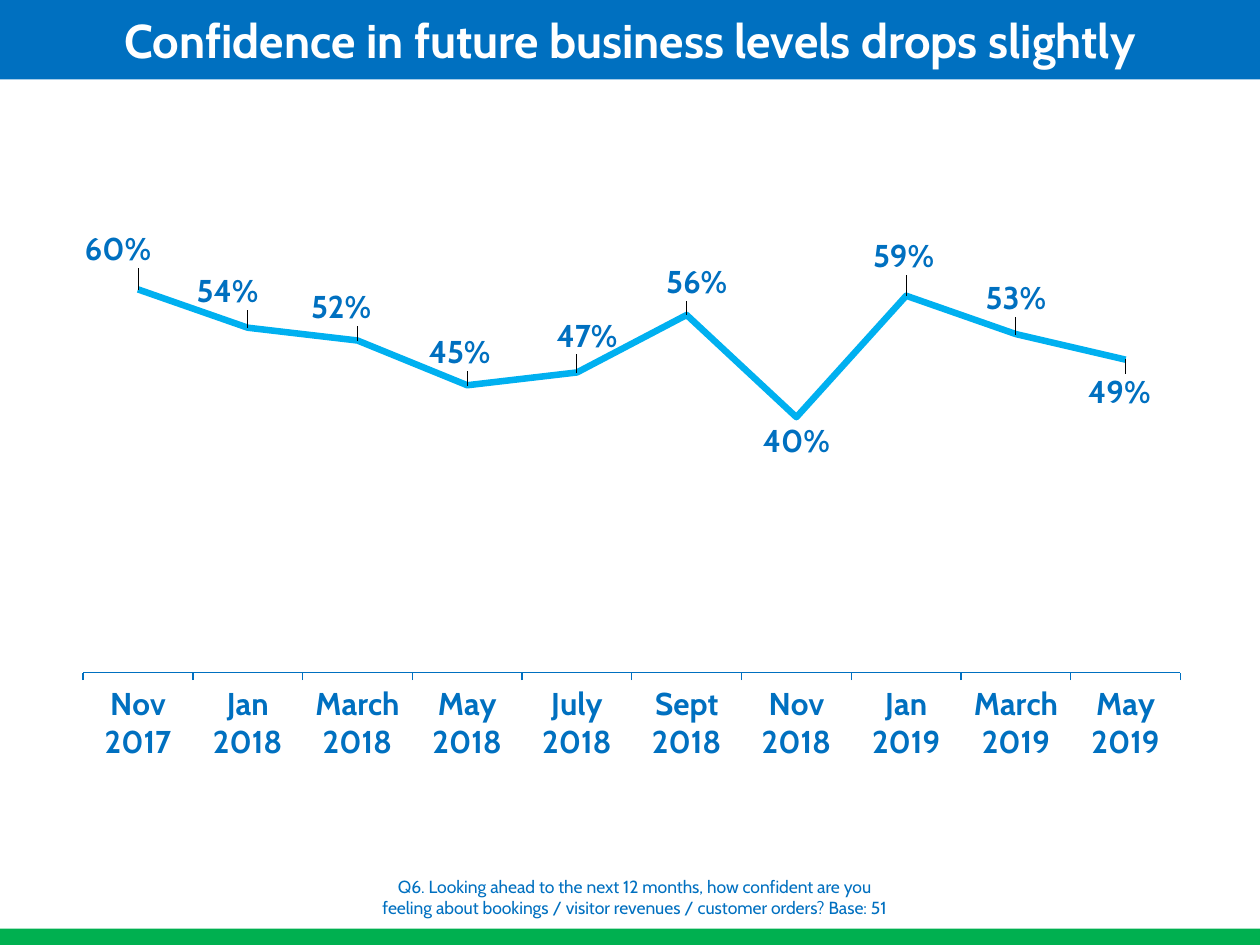
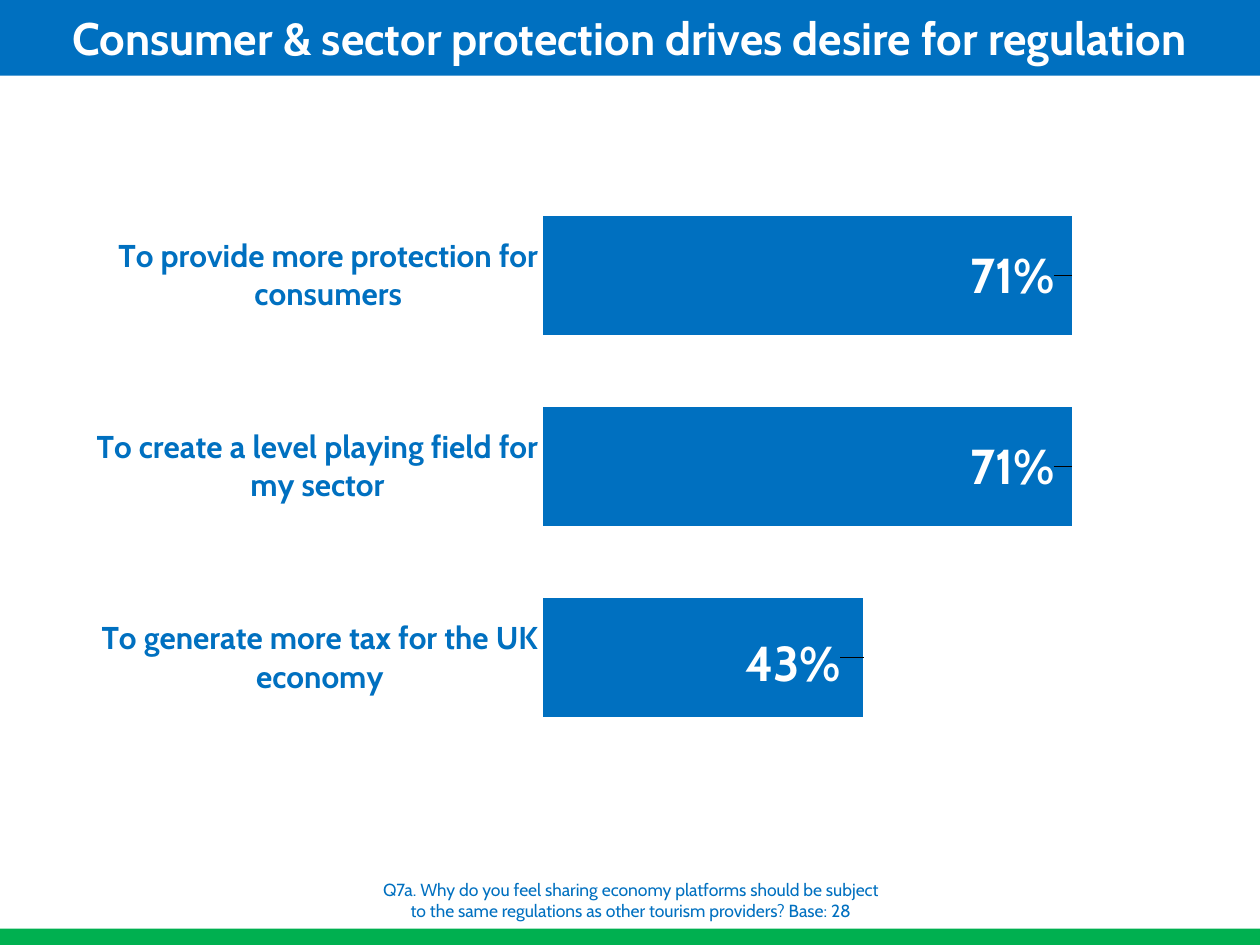
"""Build two survey slides: a confidence trend line and a bar chart of reasons for regulation."""
from dataclasses import dataclass

from lxml import etree
from pptx import Presentation
from pptx import util as u
from pptx.chart import data as chart_data
from pptx.dml import color
from pptx.enum import chart as charts, shapes, text
from pptx.oxml import ns

COLOURS = {"blue": "0070C0", "sky": "00B0F0", "green": "00B050", "white": "FFFFFF", "black": "000000"}
FONT = "Cabin"
PAGE_WIDTH, PAGE_HEIGHT = 10, 7.5
FOOTER_TOP = 7.37
ABOVE = charts.XL_LABEL_POSITION.ABOVE
BELOW = charts.XL_LABEL_POSITION.BELOW
INSIDE_END = charts.XL_LABEL_POSITION.INSIDE_END


@dataclass(frozen=True)
class Area:
    left: float
    top: float
    width: float
    height: float

    def lengths(self) -> tuple:
        return tuple(u.Inches(n) for n in (self.left, self.top, self.width, self.height))


@dataclass(frozen=True)
class Point:
    category: str
    value: float
    position: charts.XL_LABEL_POSITION
    shift_x: float = 0
    shift_y: float = 0


@dataclass(frozen=True)
class SurveyChart:
    kind: charts.XL_CHART_TYPE
    area: Area
    plot: Area
    maximum: float
    font: str
    size: int
    label_size: int
    label_colour: str
    points: list[Point]


@dataclass(frozen=True)
class SurveyPage:
    title: str
    title_size: int
    title_height: float
    question: str
    question_area: Area
    chart: SurveyChart


PAGES = [
    SurveyPage(
        "Confidence in future business levels drops slightly", 27, 0.63,
        "Q6. Looking ahead to the next 12 months, how confident are you feeling about "
        "bookings / visitor revenues / customer orders? Base: 51",
        Area(2.87, 6.9, 4.33, 0.47),
        SurveyChart(
            charts.XL_CHART_TYPE.LINE, Area(0.28, 1.55, 9.37, 4.65), Area(0.66, 1.79, 8.71, 3.55),
            0.7, "Calibri", 10, 18, "blue",
            [
                Point("Nov 2017", 0.6, ABOVE, -0.16, -0.13),
                Point("Jan 2018", 0.54, ABOVE, -0.16, -0.1),
                Point("March 2018", 0.52, ABOVE, -0.13, -0.07),
                Point("May 2018", 0.45, ABOVE, -0.06, -0.07),
                Point("July 2018", 0.47, ABOVE, 0.08, -0.1),
                Point("Sept 2018", 0.56, ABOVE, 0.08, -0.07),
                Point("Nov 2018", 0.4, BELOW),
                Point("Jan 2019", 0.59, ABOVE, -0.02, -0.12),
                Point("March 2019", 0.53, ABOVE, 0, -0.09),
                Point("May 2019", 0.49, BELOW, -0.05, 0.07),
            ],
        ),
    ),
    SurveyPage(
        "Consumer & sector protection drives desire for regulation", 26, 0.6,
        "Q7a. Why do you feel sharing economy platforms should be subject to the same "
        "regulations as other tourism providers? Base: 28",
        Area(2.93, 6.93, 4.15, 0.44),
        SurveyChart(
            charts.XL_CHART_TYPE.BAR_CLUSTERED, Area(0.75, 1.07, 8.5, 5.51), Area(4.31, 1.43, 4.73, 4.55),
            0.8, "Lato", 8, 28, "white",
            [
                Point("To provide more protection for consumers", 0.71, INSIDE_END, -0.1),
                Point("To create a level playing field for my sector", 0.71, INSIDE_END, -0.1),
                Point("To generate more tax for the UK economy", 0.43, INSIDE_END, -0.14, 0.05),
            ],
        ),
    ),
]


def rgb(name: str) -> color.RGBColor:
    return color.RGBColor.from_string(COLOURS[name])


def style_font(font, size: int, colour: str, bold: bool = False, name: str = FONT) -> None:
    font.name, font.size, font.bold = name, u.Pt(size), bold
    font.color.rgb = rgb(colour)


def write(box, wording: str, size: int, colour: str, bold: bool = False) -> None:
    box.text_frame.word_wrap = True
    para = box.text_frame.paragraphs[0]
    para.text = wording
    para.alignment = text.PP_ALIGN.CENTER
    style_font(para.font, size, colour, bold)


def add_band(page, top: float, height: float, colour: str):
    band = page.shapes.add_shape(
        shapes.MSO_SHAPE.RECTANGLE, *Area(0, top, PAGE_WIDTH, height).lengths())
    band.shadow.inherit = False
    band.fill.solid()
    band.fill.fore_color.rgb = rgb(colour)
    band.line.fill.background()
    return band


def set_layout(parent, index: int, settings: dict) -> None:
    for old in parent.findall(ns.qn("c:layout")):
        parent.remove(old)
    layout = etree.Element(ns.qn("c:layout"))
    manual = etree.SubElement(layout, ns.qn("c:manualLayout"))
    for tag, value in settings.items():
        etree.SubElement(manual, ns.qn(f"c:{tag}")).set("val", str(value))
    parent.insert(index, layout)


def style_axes(chart, is_line: bool, maximum: float) -> None:
    value_axis, category_axis = chart.value_axis, chart.category_axis
    value_axis.minimum_scale, value_axis.maximum_scale = 0, maximum
    value_axis.has_major_gridlines = False
    value_axis.visible = False
    style_font(category_axis.tick_labels.font, 18, "blue", True)
    category_axis.minor_tick_mark = charts.XL_TICK_MARK.NONE
    if is_line:
        category_axis.major_tick_mark = charts.XL_TICK_MARK.OUTSIDE
        category_axis.format.line.color.rgb = rgb("blue")
        category_axis.format.line.width = u.Pt(0.75)
    else:
        category_axis.major_tick_mark = charts.XL_TICK_MARK.NONE
        category_axis.format.line.fill.background()
        category_axis.reverse_order = True


def style_series(plot, is_line: bool):
    series = plot.series[0]
    plot.vary_by_categories = False
    if is_line:
        series.smooth = False
        series.marker.style = charts.XL_MARKER_STYLE.NONE
        series.format.line.color.rgb = rgb("sky")
        series.format.line.width = u.Pt(3.75)
    else:
        plot.gap_width = 60
        series.format.fill.solid()
        series.format.fill.fore_color.rgb = rgb("blue")
    return series


def add_labels(chart, series, spec: SurveyChart) -> None:
    labels = series.data_labels
    labels.show_value = True
    labels.number_format, labels.number_format_is_linked = "0%", False
    style_font(labels.font, spec.label_size, spec.label_colour, True)
    for index, point in enumerate(spec.points):
        label = series.points[index].data_label
        style_font(label.font, spec.label_size, spec.label_colour, True)
        label.position = point.position
    for point, element in zip(spec.points, chart.element.xpath(".//c:dLbl")):
        if point.shift_x or point.shift_y:
            set_layout(element, 1, {"x": point.shift_x / spec.area.width,
                                    "y": point.shift_y / spec.area.height})


def add_survey_chart(page, spec: SurveyChart) -> None:
    values = chart_data.CategoryChartData(number_format="0%")
    values.categories = [point.category for point in spec.points]
    values.add_series("Series 1", [point.value for point in spec.points])
    chart = page.shapes.add_chart(spec.kind, *spec.area.lengths(), values).chart
    chart.has_title = chart.has_legend = False
    style_font(chart.font, spec.size, "black", name=spec.font)

    is_line = spec.kind == charts.XL_CHART_TYPE.LINE
    style_axes(chart, is_line, spec.maximum)
    series = style_series(chart.plots[0], is_line)
    add_labels(chart, series, spec)

    area, plot = spec.area, spec.plot
    set_layout(chart.element.xpath("c:chart/c:plotArea")[0], 0, {
        "layoutTarget": "inner", "xMode": "edge", "yMode": "edge",
        "x": (plot.left - area.left) / area.width, "y": (plot.top - area.top) / area.height,
        "w": plot.width / area.width, "h": plot.height / area.height,
    })


def add_survey_page(deck, spec: SurveyPage) -> None:
    page = deck.slides.add_slide(deck.slide_layouts[6])
    add_band(page, FOOTER_TOP, PAGE_HEIGHT - FOOTER_TOP, "green")
    title = add_band(page, 0, spec.title_height, "blue")
    title.text_frame.vertical_anchor = text.MSO_ANCHOR.MIDDLE
    write(title, spec.title, spec.title_size, "white", True)
    add_survey_chart(page, spec.chart)
    question = page.shapes.add_textbox(*spec.question_area.lengths())
    write(question, spec.question, 10, "blue")


def main() -> None:
    deck = Presentation()
    deck.slide_width, deck.slide_height = u.Inches(PAGE_WIDTH), u.Inches(PAGE_HEIGHT)
    for spec in PAGES:
        add_survey_page(deck, spec)
    deck.save("out.pptx")


if __name__ == "__main__":
    main()
